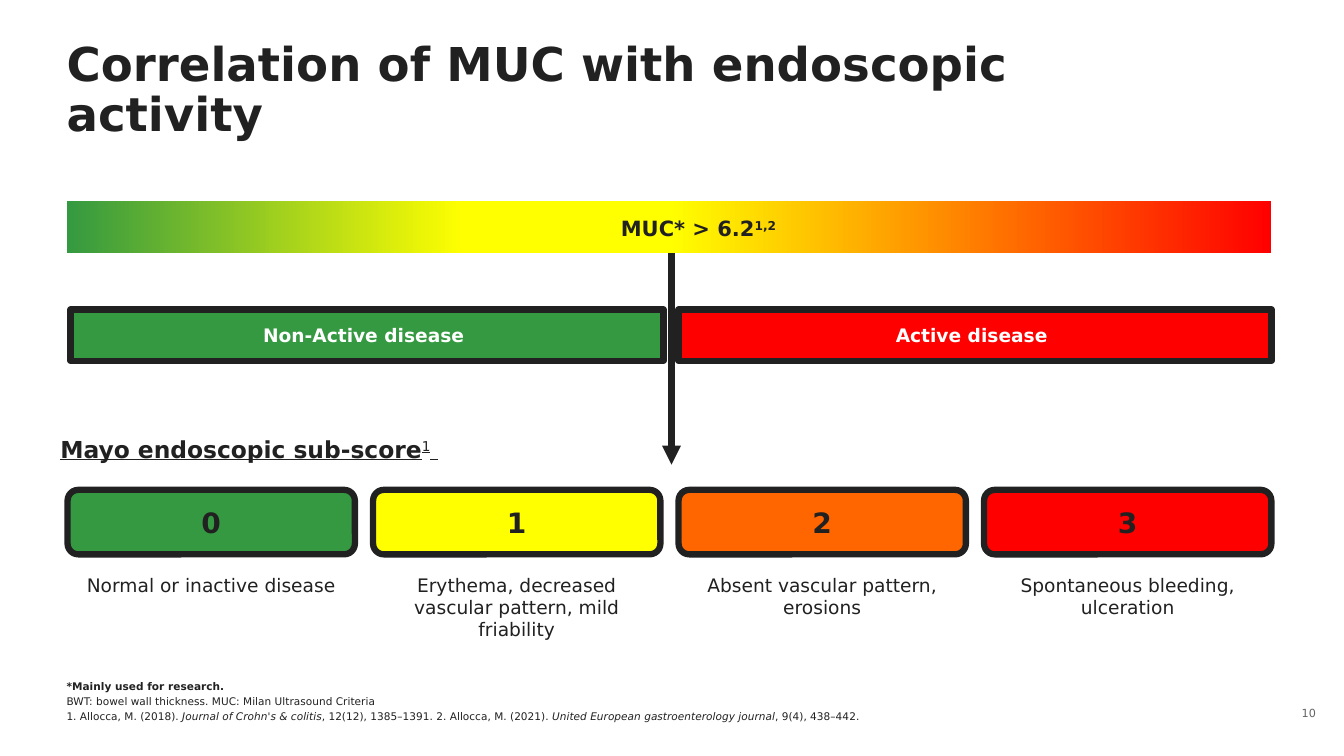
import pptx
import pptx.util
import pptx.dml.color
import pptx.enum.dml
import pptx.enum.shapes
import pptx.enum.text
import pptx.oxml
import pptx.oxml.ns
from lxml import etree

Inches, Pt = pptx.util.Inches, pptx.util.Pt
SHAPE = pptx.enum.shapes.MSO_SHAPE
ALIGN = pptx.enum.text.PP_ALIGN
ANCHOR = pptx.enum.text.MSO_ANCHOR
qn = pptx.oxml.ns.qn

FONT = "DejaVu Sans"
COLORS = {"ink": "212121", "grey": "646464", "white": "FFFFFF", "green": "349941",
          "yellow": "FFFF00", "orange": "FF6600", "red": "FF0000"}

# A run is (text, formats); formats are b(old), i(talic), u(nderline), ^ (superscript)
TITLE = [("Correlation of MUC with endoscopic activity", "b")]
PAGE_NUMBER = [("10", "")]
CUTOFF = [("MUC* > 6.2", "b"), ("1,2", "b^")]
SUBSCORE_HEADING = [("Mayo endoscopic sub-score", "bu"), ("1", "u^"), (" ", "bu")]
SCALE_STOPS = [(0, "green"), (33, "yellow"), (50, "yellow"), (100, "red")]
DISEASE_STATES = [("Non-Active disease ", "green"), ("Active disease ", "red")]
SUBSCORES = [
    ("0", "green", "Normal or inactive disease"),
    ("1", "yellow", "Erythema, decreased vascular pattern, mild friability"),
    ("2", "orange", "Absent vascular pattern, erosions"),
    ("3", "red", "Spontaneous bleeding, ulceration"),
]
FOOTNOTES = [
    [("*Mainly used for research.", "b")],
    [("BWT: bowel wall thickness. MUC: Milan Ultrasound Criteria", "")],
    [("1. Allocca, M. (2018). ", ""), ("Journal of Crohn's & colitis", "i"),
     (", 12(12), 1385–1391. 2. Allocca, M. (2021). ", ""),
     ("United European gastroenterology journal", "i"), (", 9(4), 438–442.", "")],
]

STATE_LEFT, STATE_WIDTH, STATE_PITCH = 0.7, 5.88, 6.03
SCORE_LEFT, SCORE_WIDTH, SCORE_PITCH = 0.67, 2.85, 3.03
OUTLINE = Pt(4.5)


def rgb(name):
    return pptx.dml.color.RGBColor.from_string(COLORS[name])


def add_runs(p, runs, size, color="ink", align=ALIGN.LEFT):
    p.alignment = align
    for text, formats in runs:
        r = p.add_run()
        r.text = text
        r.font.name, r.font.size = FONT, Pt(size)
        r.font.color.rgb = rgb(color)
        r.font.bold, r.font.italic = "b" in formats, "i" in formats
        r.font.underline = "u" in formats
        if "^" in formats:
            r.font._element.set("baseline", "30000")


def place(sp, left, top, width, height):
    sp.left, sp.top = Inches(left), Inches(top)
    sp.width, sp.height = Inches(width), Inches(height)


def prepare_placeholder(sp, box, anchor):
    place(sp, *box)
    tf = sp.text_frame
    tf.margin_left = tf.margin_right = tf.margin_top = tf.margin_bottom = 0
    tf.auto_size = pptx.enum.text.MSO_AUTO_SIZE.NONE
    tf.word_wrap, tf.vertical_anchor = True, anchor
    return tf


def add_text(s, box, runs, size, **style):
    tf = s.shapes.add_textbox(*map(Inches, box)).text_frame
    tf.word_wrap = True
    add_runs(tf.paragraphs[0], runs, size, **style)
    return tf


def add_box(s, kind, box, fill, text, size, color="ink"):
    sp = s.shapes.add_shape(kind, *map(Inches, box))
    sp.shadow.inherit = False
    sp.fill.solid()
    sp.fill.fore_color.rgb = rgb(fill)
    sp.line.color.rgb, sp.line.width = rgb("ink"), OUTLINE
    tf = sp.text_frame
    tf.word_wrap, tf.vertical_anchor = True, ANCHOR.MIDDLE
    add_runs(tf.paragraphs[0], [(text, "b")], size, color, ALIGN.CENTER)


def add_cutoff_arrow(s, x, top, bottom):
    arrow = s.shapes.add_connector(pptx.enum.shapes.MSO_CONNECTOR.STRAIGHT,
                                   Inches(x), Inches(top), Inches(x), Inches(bottom))
    arrow.line.color.rgb, arrow.line.width = rgb("ink"), OUTLINE
    etree.SubElement(arrow.line._get_or_add_ln(), qn("a:tailEnd"), type="triangle")
    etree.SubElement(arrow._element.spPr, qn("a:effectLst"))


def add_scale_bar(s, box):
    bar = s.shapes.add_shape(SHAPE.RECTANGLE, *map(Inches, box))
    bar.shadow.inherit = False
    bar.line.fill.background()
    bar.fill.gradient()
    bar.fill.gradient_angle = 0
    stops = bar._element.spPr.find(qn("a:gradFill")).find(qn("a:gsLst"))
    for stop in list(stops):
        stops.remove(stop)
    for percent, color in SCALE_STOPS:
        stop = etree.SubElement(stops, qn("a:gs"), pos=str(percent * 1000))
        etree.SubElement(stop, qn("a:srgbClr"), val=COLORS[color])


def main():
    prs = pptx.Presentation()
    prs.slide_width, prs.slide_height = Inches(13.33), Inches(7.5)
    s = prs.slides.add_slide(prs.slide_layouts[1])

    tf = prepare_placeholder(s.shapes.title, (0.66, 0.41, 11.1, 1.01), ANCHOR.TOP)
    tf.paragraphs[0].line_spacing = 0.9
    add_runs(tf.paragraphs[0], TITLE, 33.3)

    tf = prepare_placeholder(s.placeholders[1], (0.66, 6.87, 9.17, 0.3), ANCHOR.BOTTOM)
    for i, runs in enumerate(FOOTNOTES):
        p = tf.add_paragraph() if i else tf.paragraphs[0]
        pPr = p._p.get_or_add_pPr()
        pPr.set("marL", "0")
        pPr.set("indent", "0")
        etree.SubElement(pPr, qn("a:buNone"))
        p.space_before = Pt(1.7 if i else 0)
        add_runs(p, runs, 7.5)

    tf = add_text(s, (12.73, 6.89, 0.42, 0.36), PAGE_NUMBER, 8, color="grey", align=ALIGN.RIGHT)
    tf.vertical_anchor = ANCHOR.MIDDLE

    add_text(s, (0.5, 4.27, 7.33, 0.38), SUBSCORE_HEADING, 16.7)
    for i, (score, fill, finding) in enumerate(SUBSCORES):
        left = SCORE_LEFT + i * SCORE_PITCH
        add_box(s, SHAPE.ROUNDED_RECTANGLE, (left, 4.86, SCORE_WIDTH, 0.64), fill, score, 20)
        add_text(s, (left, 5.64, SCORE_WIDTH, 0.77), [(finding, "")], 13.3, align=ALIGN.CENTER)

    for i, (state, fill) in enumerate(DISEASE_STATES):
        box = (STATE_LEFT + i * STATE_PITCH, 3.07, STATE_WIDTH, 0.51)
        add_box(s, SHAPE.RECTANGLE, box, fill, state, 13.3, "white")

    add_cutoff_arrow(s, 6.66, 2.48, 4.61)
    add_scale_bar(s, (0.66, 1.99, 11.95, 0.52))
    add_text(s, (6.06, 2.09, 1.77, 0.61), CUTOFF, 15)

    prs.save("out.pptx")


if __name__ == "__main__":
    main()
